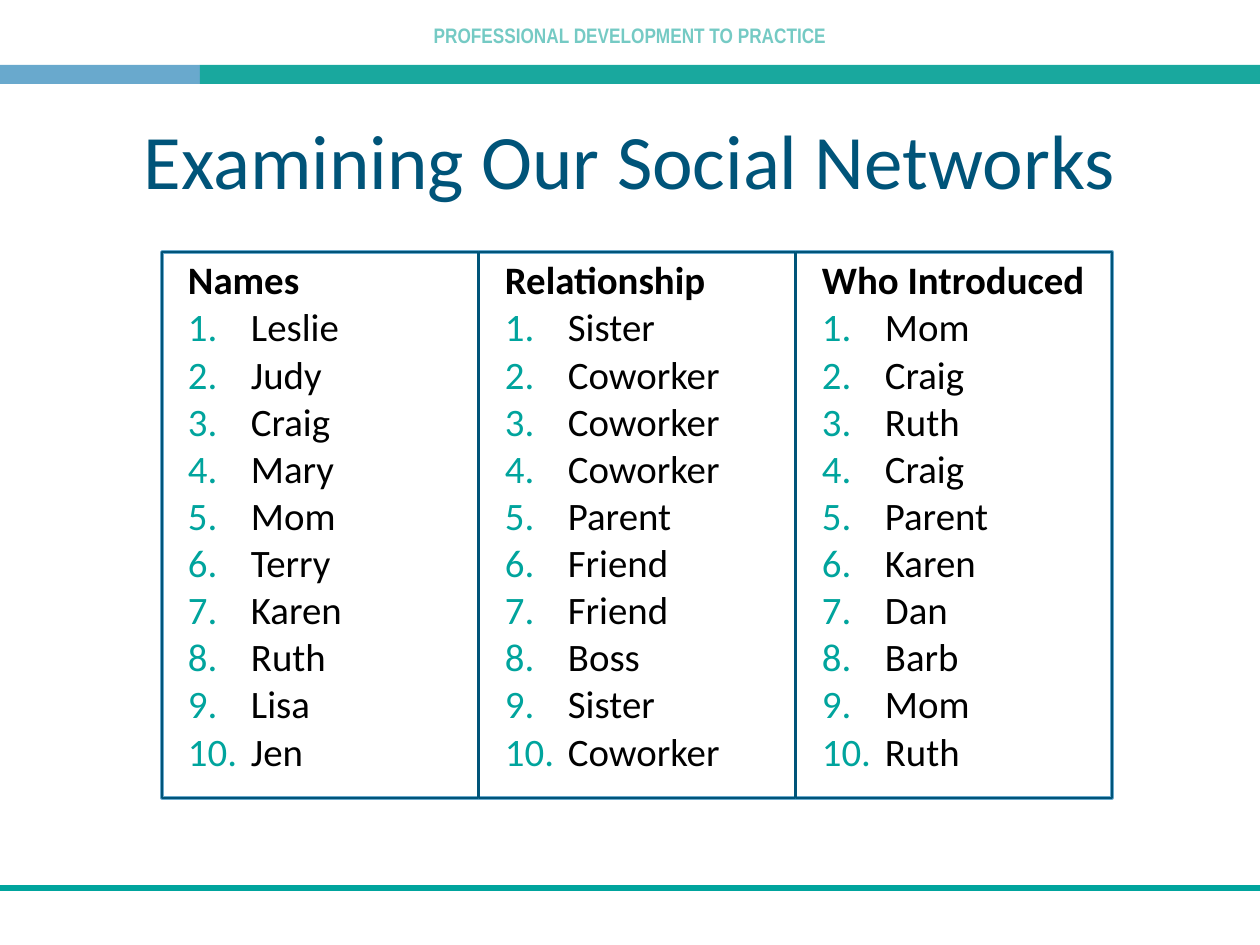
from lxml.etree import SubElement
from pptx import Presentation
from pptx.dml.color import RGBColor
from pptx.enum.shapes import MSO_CONNECTOR as Connector, MSO_SHAPE as Shape
from pptx.enum.text import MSO_ANCHOR as Anchor, PP_ALIGN as Align
from pptx.oxml.ns import qn
from pptx.util import Pt

PX = 7257  # EMU per px, 126 px to the inch
WIDTH, HEIGHT = 1260, 945

WHITE = RGBColor(0xFF, 0xFF, 0xFF)
BLACK = RGBColor(0x00, 0x00, 0x00)
NAVY = RGBColor(0x00, 0x54, 0x79)
BLUE = RGBColor(0x69, 0xA9, 0xCD)
TEAL = RGBColor(0x19, 0xA8, 0x9E)
GREEN = RGBColor(0x00, 0xA4, 0x9D)

COLUMNS = [
    ("Names", ["Leslie", "Judy", "Craig", "Mary", "Mom",
               "Terry", "Karen", "Ruth", "Lisa", "Jen"]),
    ("Relationship", ["Sister", "Coworker", "Coworker", "Coworker", "Parent",
                      "Friend", "Friend", "Boss", "Sister", "Coworker"]),
    ("Who Introduced", ["Mom", "Craig", "Ruth", "Craig", "Parent",
                        "Karen", "Dan", "Barb", "Mom", "Ruth"]),
]

presentation = Presentation()
presentation.slide_width = WIDTH * PX
presentation.slide_height = HEIGHT * PX
slide = presentation.slides.add_slide(presentation.slide_layouts[6])


def add_box(left, top, width, height, fill=None, line=None, points=1):
    shape = slide.shapes.add_shape(
        Shape.RECTANGLE, left * PX, top * PX, width * PX, height * PX)
    shape.shadow.inherit = False
    if fill is None:
        shape.fill.background()
    else:
        shape.fill.solid()
        shape.fill.fore_color.rgb = fill
    if line is None:
        shape.line.fill.background()
    else:
        shape.line.color.rgb = line
        shape.line.width = Pt(points)
    return shape


def add_run(paragraph, text, font_name, size, color, bold=False):
    run = paragraph.add_run()
    run.text = text
    run.font.name = font_name
    run.font.size = Pt(size)
    run.font.bold = bold
    run.font.color.rgb = color
    return run


# Header text, title
for text, top, height, font_name, size, color, bold in [
    ("PROFESSIONAL DEVELOPMENT TO PRACTICE", 16, 50, "Arial Narrow", 12, TEAL, True),
    ("Examining Our Social Networks", 83, 151, "Calibri", 44, NAVY, False),
]:
    box = slide.shapes.add_textbox(0, top * PX, WIDTH * PX, height * PX)
    frame = box.text_frame
    frame.word_wrap = True
    frame.vertical_anchor = Anchor.TOP if bold else Anchor.MIDDLE
    paragraph = frame.paragraphs[0]
    paragraph.alignment = Align.CENTER
    run = add_run(paragraph, text, font_name, size, color, bold)
    if color == TEAL:  # the header is 60 % opaque
        rgb = run.font._element.find(".//" + qn("a:srgbClr"))
        SubElement(rgb, qn("a:alpha"), val="60000")

# Header bars
add_box(0, 65, 200, 19, BLUE)
add_box(200, 65, WIDTH - 200, 19, TEAL)

# Footer rule
rule = slide.shapes.add_connector(
    Connector.STRAIGHT, 0, 888 * PX, WIDTH * PX, 888 * PX)
rule.line.color.rgb = GREEN
rule.line.width = Pt(3)
SubElement(rule._element.spPr, qn("a:effectLst"))

# Frame around the three lists
LEFT, TOP, LIST_WIDTH, LIST_HEIGHT = 162, 252, 317, 546
add_box(LEFT, TOP, 3 * LIST_WIDTH - 1, LIST_HEIGHT, WHITE, BLUE, 2)

# Numbered lists
for index, (heading, names) in enumerate(COLUMNS):
    column = add_box(LEFT + index * LIST_WIDTH, TOP, LIST_WIDTH - 1, LIST_HEIGHT,
                     line=NAVY, points=0.75)
    frame = column.text_frame
    frame.word_wrap = True
    frame.vertical_anchor = Anchor.TOP
    frame.margin_left = frame.margin_right = 13 * PX
    frame.margin_top = frame.margin_bottom = 13 * PX

    for row, text in enumerate([heading] + names):
        paragraph = frame.add_paragraph() if row else frame.paragraphs[0]
        paragraph.alignment = Align.LEFT
        paragraph.line_spacing = 0.8
        properties = paragraph._p.get_or_add_pPr()
        if row:
            paragraph.space_before = Pt(5.6)
            properties.set("marL", str(76 * PX))
            properties.set("indent", str(-63 * PX))
            bullet_color = SubElement(properties, qn("a:buClr"))
            SubElement(bullet_color, qn("a:srgbClr"), val=str(GREEN))
            SubElement(properties, qn("a:buFont"), typeface="+mj-lt")
            SubElement(properties, qn("a:buAutoNum"), type="arabicPeriod")
        else:
            properties.set("marL", str(13 * PX))
            properties.set("indent", "0")
        add_run(paragraph, text, "Calibri", 22.2, BLACK, bold=row == 0)

presentation.save("out.pptx")
